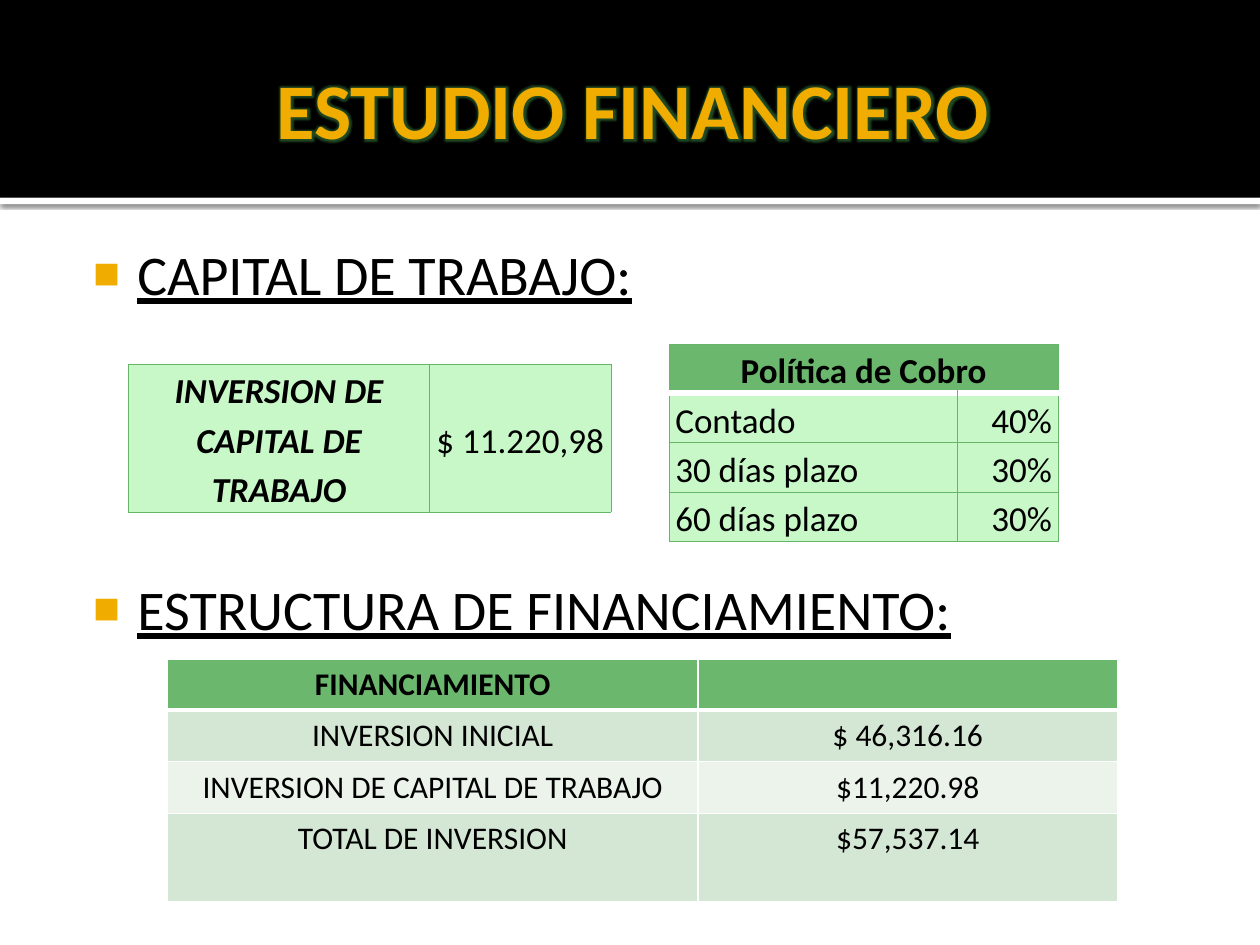
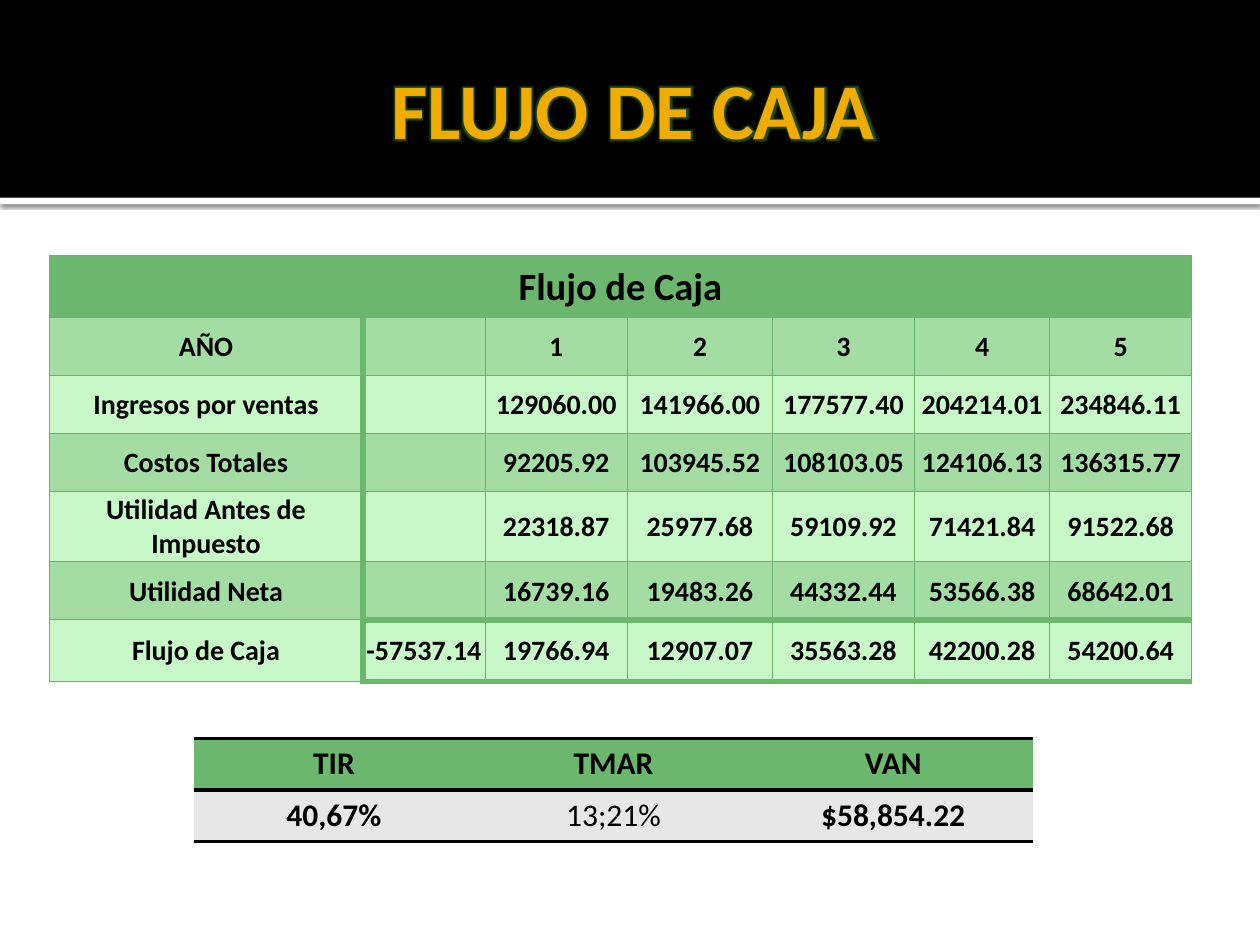
from lxml import etree
from pptx import Presentation
from pptx.dml.color import RGBColor
from pptx.enum.shapes import MSO_SHAPE as SHAPE
from pptx.enum.text import MSO_ANCHOR as ANCHOR, MSO_AUTO_SIZE as AUTO, PP_ALIGN as ALIGN
from pptx.oxml import parse_xml
from pptx.oxml.ns import nsdecls, qn
from pptx.util import Inches, Pt

COLORS = {
    "black": "000000", "white": "FFFFFF", "gold": "F0AD00", "glow": "4BA54E",
    "green": "6BB76D", "line": "67B569", "light": "C8F7C8", "band": "A3DDA4",
    "pale": "D4E6D4", "paler": "EBF3EB", "gray": "E7E7E7",
}
FONT = "Calibri"
SIDES = ("L", "R", "T", "B")
TITLE_LAYOUT, LIST_LAYOUT = 5, 1


def rgb(name):
    return RGBColor.from_string(COLORS[name])


def drawing(xml):
    """Parse one DrawingML element given without its namespace."""
    tag, rest = xml.split(" ", 1)
    return parse_xml(f"{tag} {nsdecls('a')} {rest}")


class Deck:
    def __init__(self):
        self.prs = Presentation()
        self.prs.slide_width, self.prs.slide_height = Inches(10), Inches(7.5)
        self.s = None

    # Slides and their shared bands
    def slide(self, title, layout):
        self.s = self.prs.slides.add_slide(self.prs.slide_layouts[layout])
        self.title(title)

    def master_band(self, index, y, h, color, shadow=None):
        sp = self.s.shapes.add_shape(SHAPE.RECTANGLE, 0, Inches(y), Inches(10), Inches(h))
        sp.shadow.inherit = False
        sp.fill.solid()
        sp.fill.fore_color.rgb = rgb(color)
        sp.line.fill.background()
        if shadow is not None:
            sp._element.spPr.find(qn("a:effectLst")).append(shadow)
        self.prs.slide_master.shapes._spTree.insert(2 + index, sp._element)

    # Text
    def style(self, p, size, color="black", bold=False, italic=False, align=None):
        p.alignment = align
        f = p.font
        f.name, f.size, f.bold, f.italic = FONT, Pt(size), bold, italic
        f.color.rgb = rgb(color)

    def frame(self, sp, box, insets, anchor):
        sp.left, sp.top, sp.width, sp.height = map(Inches, box)
        tf = sp.text_frame
        tf.auto_size, tf.word_wrap, tf.vertical_anchor = AUTO.NONE, True, anchor
        (tf.margin_left, tf.margin_top,
         tf.margin_right, tf.margin_bottom) = map(Inches, insets)
        return tf

    def title(self, text):
        tf = self.frame(self.s.shapes.title, (0.5, 0.17, 9, 1.37),
                        (0.1, 0.05, 0.05, 0.05), ANCHOR.MIDDLE)
        p = tf.paragraphs[0]
        r = p.add_run()
        r.text = text
        self.style(p, 45, "gold", bold=True, align=ALIGN.CENTER)
        r._r.get_or_add_rPr().append(drawing(
            f'<a:effectLst ><a:glow rad="63500"><a:srgbClr val="{COLORS["glow"]}">'
            '<a:alpha val="45000"/></a:srgbClr></a:glow></a:effectLst>'))

    def headings(self, items, gap):
        tf = self.frame(self.s.placeholders[1], (0.55, 1.8, 9, 5.06),
                        (0.06, 0.1, 0.1, 0.05), ANCHOR.TOP)
        for i, text in enumerate(items):
            p = tf.paragraphs[0] if i == 0 else tf.add_paragraph()
            p.text = text
            self.style(p, 32, align=ALIGN.LEFT)
            p.font.underline = True
            p.space_before = Pt(gap if i else 0)
            pPr = p._p.get_or_add_pPr()
            pPr.set("marL", str(Inches(0.48)))
            pPr.set("indent", str(Inches(-0.35)))
            bullet = (f'<a:buClr ><a:srgbClr val="{COLORS["gold"]}"/></a:buClr>',
                      '<a:buSzPct val="80000"/>', '<a:buFont typeface="Arial"/>',
                      '<a:buChar char="■"/>')
            for xml in bullet:
                pPr.find(qn("a:defRPr")).addprevious(drawing(xml))

    # Tables
    def table(self, box, cols, rows, data, fills, size, border=("line", 0.5),
              insets=(0.1, 0.05, 0.1, 0.05), anchor=ANCHOR.MIDDLE, spacing=1.0,
              bold=lambda r, c: r == 0, align=lambda r, c: ALIGN.CENTER):
        x, y = box
        t = self.s.shapes.add_table(len(rows), len(cols), Inches(x), Inches(y),
                                    Inches(sum(cols)), Inches(sum(rows))).table
        t.first_row = t.horz_banding = False
        for col, w in zip(t.columns, cols):
            col.width = Inches(w)
        for r, (row, h) in enumerate(zip(t.rows, rows)):
            row.height = Inches(h)
            for c, cell in enumerate(row.cells):
                cell.fill.solid()
                cell.fill.fore_color.rgb = rgb(fills[r])
                cell.vertical_anchor = anchor
                (cell.margin_left, cell.margin_top,
                 cell.margin_right, cell.margin_bottom) = map(Inches, insets)
                for side in SIDES:
                    self.edge(cell, side, *border)
                if data[r][c]:
                    cell.text = data[r][c]
                    p = cell.text_frame.paragraphs[0]
                    p.line_spacing = spacing
                    self.style(p, size, bold=bold(r, c), align=align(r, c))
        return t

    def edge(self, cell, side, color, width):
        tcPr = cell._tc.get_or_add_tcPr()
        paint = (f'<a:solidFill><a:srgbClr val="{COLORS[color]}"/></a:solidFill>'
                 if color else "<a:noFill/>")
        ln = drawing(f'<a:ln{side} w="{Pt(width)}">{paint}</a:ln{side}>')
        old = tcPr.find(qn(f"a:ln{side}"))
        if old is None:
            tcPr.insert(SIDES.index(side), ln)
        else:
            tcPr.replace(old, ln)

    def rule_below(self, t, row, color, width, first=0):
        """Draw the line under a row, on both cells that share it."""
        for c in range(first, len(t.columns)):
            self.edge(t.cell(row, c), "B", color, width)
            if row + 1 < len(t.rows):
                self.edge(t.cell(row + 1, c), "T", color, width)


def main():
    d = Deck()

    # Slide 1: working capital and financing
    d.slide("ESTUDIO FINANCIERO", LIST_LAYOUT)
    shadow = drawing(
        f'<a:outerShdw blurRad="{Pt(2.5)}" dist="{Pt(0.8)}" dir="5400000">'
        f'<a:srgbClr val="{COLORS["black"]}"><a:alpha val="60000"/></a:srgbClr></a:outerShdw>')
    d.master_band(0, 1.57, 0.05, "white", shadow)
    d.master_band(1, 0, 1.57, "black")
    d.headings(["CAPITAL DE TRABAJO:", "ESTRUCTURA DE FINANCIAMIENTO:"], gap=153)

    tight = dict(size=20, insets=(0.05, 0, 0.05, 0), spacing=1.15)
    policy = d.table(
        (5.31, 2.73), [2.29, 0.8], [0.39] * 4,
        [["Política de Cobro", ""], ["Contado", "40%"],
         ["30 días plazo", "30%"], ["60 días plazo", "30%"]],
        ["green"] + ["light"] * 3, anchor=ANCHOR.BOTTOM,
        align=lambda r, c: ALIGN.CENTER if r == 0 else (ALIGN.LEFT, ALIGN.RIGHT)[c], **tight)
    policy.cell(0, 0).merge(policy.cell(0, 1))
    d.rule_below(policy, 0, "white", 3.78)

    capital = d.table((1.02, 2.89), [2.39, 1.44], [1.17],
                      [["INVERSION DE CAPITAL DE TRABAJO", "$ 11.220,98"]],
                      ["light"], bold=lambda r, c: c == 0, **tight)
    capital.cell(0, 0).text_frame.paragraphs[0].font.italic = True

    financing = d.table(
        (1.33, 5.23), [4.21, 3.33], [0.4, 0.41, 0.41, 0.7],
        [["FINANCIAMIENTO", ""], ["INVERSION INICIAL", "$ 46,316.16"],
         ["INVERSION DE CAPITAL DE TRABAJO", "$11,220.98"],
         ["TOTAL DE INVERSION", "$57,537.14"]],
        ["green", "pale", "paler", "pale"], 18, ("white", 1), anchor=ANCHOR.TOP)
    d.rule_below(financing, 0, "white", 3)

    # Slide 2: cash flow and its indicators
    d.slide("FLUJO DE CAJA", TITLE_LAYOUT)
    rates = d.table((1.54, 5.86), [2.22] * 3, [0.41] * 2,
                    [["TIR", "TMAR", "VAN"], ["40,67%", "13;21%", "$58,854.22"]],
                    ["green", "gray"], 18, (None, 0),
                    bold=lambda r, c: r == 0 or c != 1)
    for c in range(3):
        d.edge(rates.cell(0, c), "T", "black", 2)
    for r in range(2):
        d.rule_below(rates, r, "black", 2)

    flow = d.table(
        (0.39, 2.03), [2.49, 0.97, 1.13, 1.15, 1.13, 1.07, 1.13],
        [0.49, 0.46, 0.46, 0.46, 0.56, 0.46, 0.49],
        [["Flujo de Caja"] + [""] * 6,
         ["AÑO", "", "1", "2", "3", "4", "5"],
         ["Ingresos por ventas", "", "129060.00", "141966.00", "177577.40",
          "204214.01", "234846.11"],
         ["Costos Totales", "", "92205.92", "103945.52", "108103.05",
          "124106.13", "136315.77"],
         ["Utilidad Antes de Impuesto", "", "22318.87", "25977.68", "59109.92",
          "71421.84", "91522.68"],
         ["Utilidad Neta", "", "16739.16", "19483.26", "44332.44",
          "53566.38", "68642.01"],
         ["Flujo de Caja", "-57537.14", "19766.94", "12907.07", "35563.28",
          "42200.28", "54200.64"]],
        ["green"] + ["band", "light"] * 3, 16, insets=(0.01, 0.01, 0.01, 0),
        bold=lambda r, c: True)
    flow.cell(0, 0).merge(flow.cell(0, 6))
    flow.cell(0, 0).text_frame.paragraphs[0].font.size = Pt(22)
    for r in range(1, 7):
        d.edge(flow.cell(r, 0), "R", "green", 3.78)
        d.edge(flow.cell(r, 1), "L", "green", 3.78)
    for r in (5, 6):
        d.rule_below(flow, r, "green", 3.78, first=1)

    d.prs.save("out.pptx")


if __name__ == "__main__":
    main()
